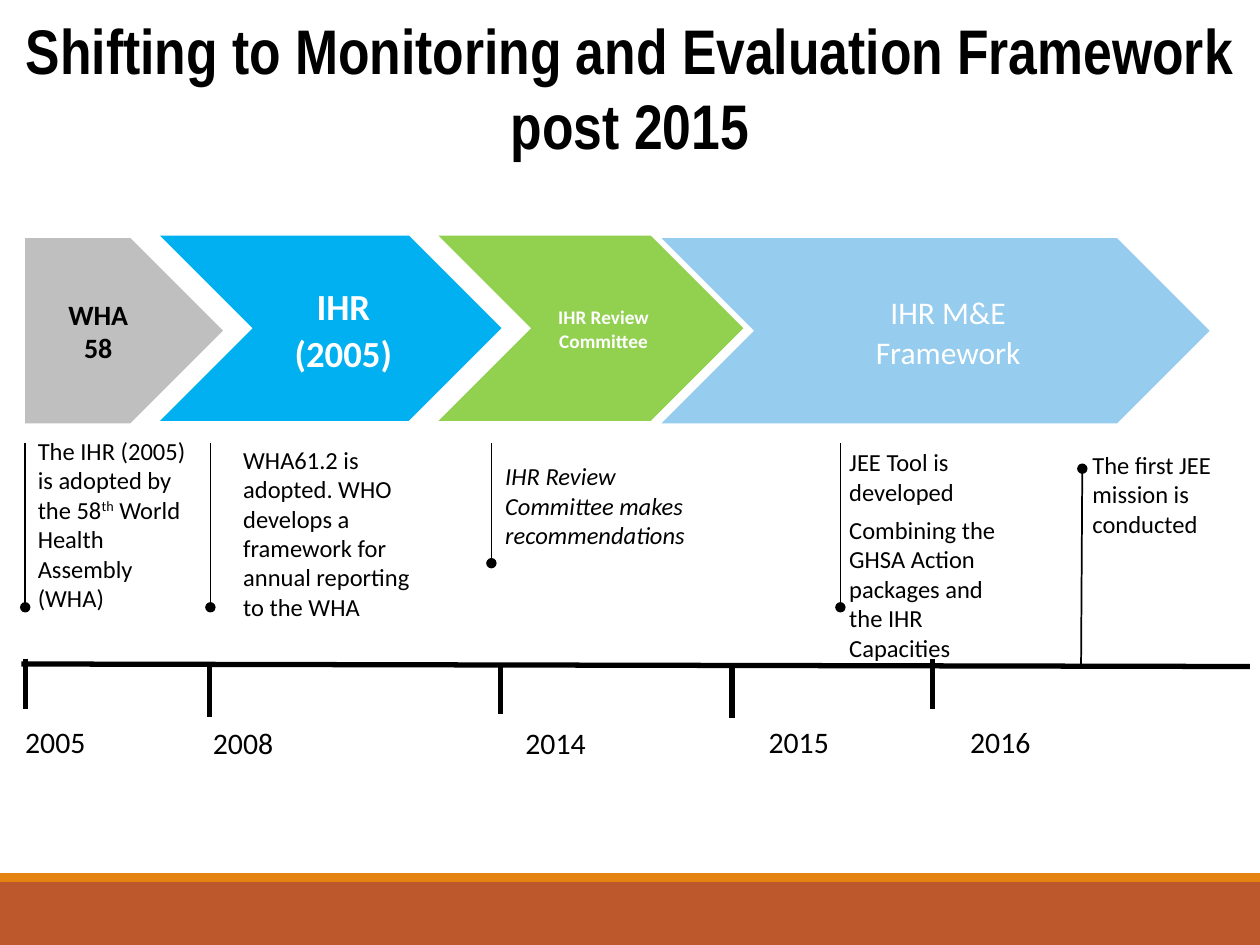
"""Builds the slide on the shift to the monitoring and evaluation framework."""
from lxml import etree
from pptx import Presentation
from pptx.dml.color import RGBColor
from pptx.enum.shapes import MSO_CONNECTOR, MSO_SHAPE
from pptx.enum.text import MSO_ANCHOR, MSO_AUTO_SIZE, PP_ALIGN
from pptx.oxml.ns import qn
from pptx.util import Inches, Pt

STRAIGHT = MSO_CONNECTOR.STRAIGHT
RECTANGLE, PENTAGON, CHEVRON = MSO_SHAPE.RECTANGLE, MSO_SHAPE.PENTAGON, MSO_SHAPE.CHEVRON
MIDDLE = MSO_ANCHOR.MIDDLE
FIT_SHAPE, NO_FIT = MSO_AUTO_SIZE.SHAPE_TO_FIT_TEXT, MSO_AUTO_SIZE.NONE
LEFT, CENTER = PP_ALIGN.LEFT, PP_ALIGN.CENTER
BLACK, WHITE = "000000", "FFFFFF"
NO_INSETS, WIDE_INSETS = (0, 0, 0, 0), (0.2, 0.1, 0.2, 0.1)
ARROW_INSETS = (0.2, 0.19, 0, 0.19)


def rgb(value):
    return RGBColor.from_string(value)


def write(frame, paragraphs, size=14, font="Calibri", color=BLACK, bold=False, italic=False,
          align=LEFT, insets=NO_INSETS, before=0, spacing=None, wrap=True, fit=FIT_SHAPE):
    """Fills a text frame; a paragraph is split at ^ into normal and raised runs."""
    frame.word_wrap, frame.auto_size = wrap, fit
    (frame.margin_left, frame.margin_top,
     frame.margin_right, frame.margin_bottom) = map(Inches, insets)
    for number, text in enumerate(paragraphs):
        paragraph = frame.add_paragraph() if number else frame.paragraphs[0]
        paragraph.alignment, paragraph.space_before = align, Pt(before)
        if spacing:
            paragraph.line_spacing = spacing
        for part, words in enumerate(text.split("^")):
            run = paragraph.add_run()
            run.text = words
            run.font.name, run.font.size = font, Pt(size)
            run.font.bold, run.font.italic = bold, italic
            run.font.color.rgb = rgb(color)
            if part % 2:
                run.font._element.set("baseline", "30000")


class Timeline:
    """Holds the current slide and draws the elements of the timeline."""

    def __init__(self, slide):
        self.slide = slide

    def title(self, text, *box):
        heading = self.slide.shapes.title
        heading.left, heading.top, heading.width, heading.height = map(Inches, box)
        heading.text_frame.vertical_anchor = MIDDLE
        write(heading.text_frame, [text], size=36, font="Arial Narrow", bold=True,
              align=CENTER, insets=(0.09, 0.04, 0.09, 0.04), fit=NO_FIT)

    def block(self, kind, fill, *box):
        block = self.slide.shapes.add_shape(kind, *map(Inches, box))
        block.shadow.inherit = False
        block.fill.solid()
        block.fill.fore_color.rgb = rgb(fill)
        block.line.fill.background()
        return block

    def chevron(self, fill, left, top, width, lines, **style):
        frame = self.block(CHEVRON, fill, left, top, width, 1.47).text_frame
        frame.vertical_anchor = MIDDLE
        write(frame, lines, color=WHITE, align=CENTER, insets=ARROW_INSETS,
              spacing=1.06, fit=NO_FIT, **style)

    def text(self, box, *paragraphs, **style):
        label = self.slide.shapes.add_textbox(*map(Inches, box))
        write(label.text_frame, paragraphs, **style)

    def line(self, *ends, weight=3, dot=False):
        line = self.slide.shapes.add_connector(STRAIGHT, *map(Inches, ends))
        line.line.color.rgb, line.line.width = rgb(BLACK), Pt(weight)
        if dot:
            etree.SubElement(line.line._get_or_add_ln(), qn("a:tailEnd"), type="oval")
        etree.SubElement(line._element.spPr, qn("a:effectLst"))


def main():
    deck = Presentation()
    deck.slide_width, deck.slide_height = Inches(10), Inches(7.5)
    timeline = Timeline(deck.slides.add_slide(deck.slide_layouts[5]))

    timeline.block(RECTANGLE, "BD582C", 0, 7, 10, 0.5)
    timeline.block(RECTANGLE, "E48312", 0, 6.93, 10, 0.07)
    timeline.title("Shifting to Monitoring and Evaluation Framework post 2015", 0, 0.04, 10, 1.3)

    timeline.block(PENTAGON, "BFBFBF", 0.2, 1.89, 1.57, 1.47)
    timeline.text((0.3, 2.26, 0.96, 0.74), "WHA 58", size=16, bold=True,
                  align=CENTER, insets=WIDE_INSETS)
    timeline.chevron("00B0F0", 1.27, 1.87, 2.71, ["IHR (2005)"], size=21, bold=True)
    timeline.chevron("92D050", 3.48, 1.87, 2.42, ["IHR Review Committee"], size=11, bold=True)
    timeline.chevron("96CCEE", 5.25, 1.89, 4.35, ["IHR M&E", "Framework"], size=18)

    timeline.text((0.3, 3.46, 1.26, 1.65),
                  "The IHR (2005) is adopted by the 58^th^ World Health Assembly (WHA)", before=5)
    timeline.text((1.73, 3.43, 1.82, 1.85),
                  "WHA61.2 is adopted. WHO develops a framework for annual reporting to the WHA",
                  insets=WIDE_INSETS)
    timeline.text((4.01, 3.66, 1.6, 0.71), "IHR Review Committee makes recommendations",
                  italic=True)
    timeline.text((6.74, 3.55, 1.37, 1.72), "JEE Tool is developed",
                  "Combining the GHSA Action packages and the IHR Capacities", before=5)
    timeline.text((8.67, 3.57, 1.16, 0.71), "The first JEE mission is conducted", before=5)

    for x, bottom in [(0.2, 4.82), (1.67, 4.82), (3.9, 4.47), (6.67, 4.82)]:
        timeline.line(x, 3.52, x, bottom, weight=1, dot=True)
    timeline.line(8.58, 5.28, 8.59, 3.72, weight=1, dot=True)

    timeline.line(0.17, 5.27, 9.92, 5.29)
    years = [("2005", 0.2, 5.23, 0, 5.64), ("2008", 1.66, 5.29, 1.49, 5.65),
             ("2014", 3.97, 5.27, 3.97, 5.65), ("2015", 5.81, 5.3, 5.9, 5.64),
             ("2016", 7.4, 5.23, 7.5, 5.64)]
    for year, tick, tick_top, left, top in years:
        timeline.line(tick, tick_top, tick, tick_top + 0.4)
        timeline.text((left, top, 0.96, 0.49), year, size=17, insets=WIDE_INSETS, wrap=False)

    deck.save("out.pptx")


if __name__ == "__main__":
    main()
